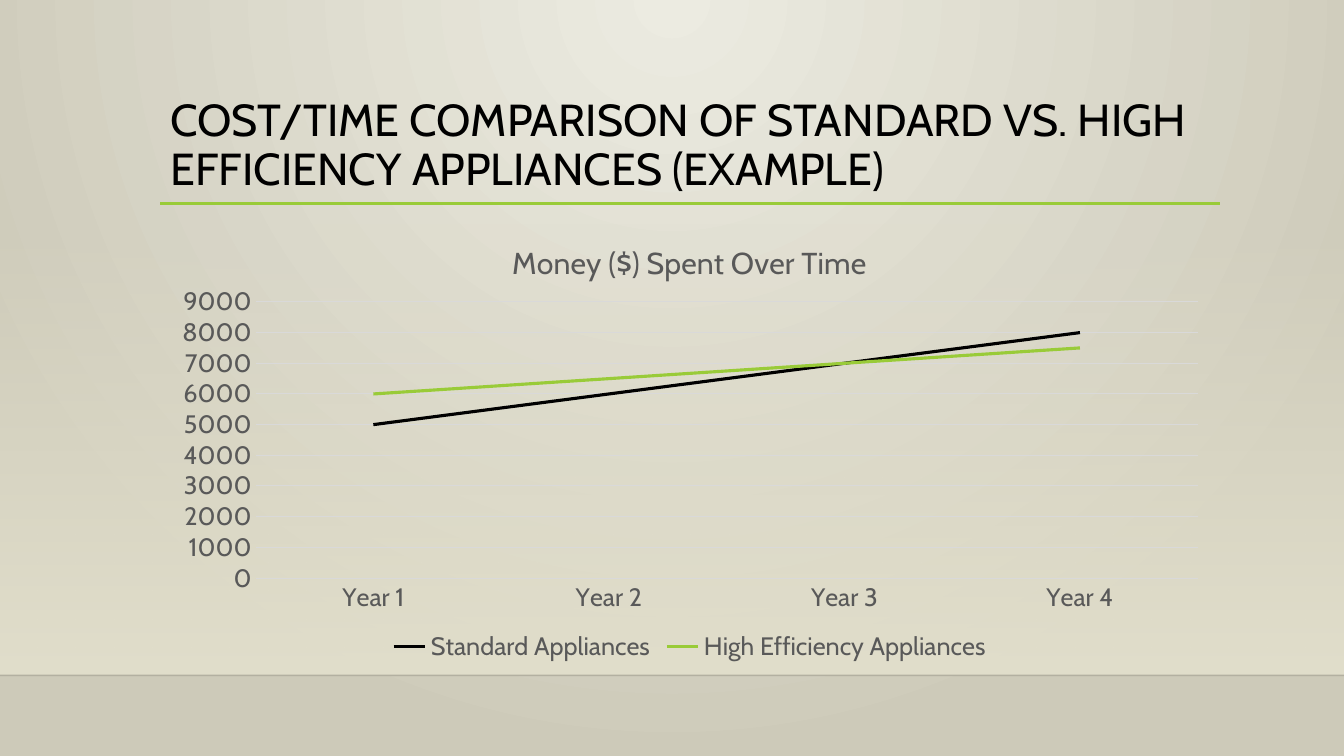
from typing import NamedTuple

from lxml.etree import SubElement
from pptx import Presentation
from pptx.chart.data import CategoryChartData
from pptx.dml.color import RGBColor
from pptx.enum.chart import XL_CHART_TYPE, XL_LEGEND_POSITION, XL_TICK_MARK
from pptx.enum.shapes import MSO_CONNECTOR, MSO_SHAPE
from pptx.enum.text import MSO_ANCHOR, MSO_AUTO_SIZE, PP_ALIGN
from pptx.oxml import parse_xml
from pptx.oxml.ns import nsdecls, qn
from pptx.util import Inches, Pt

FONT = "Cabin"
BLACK, GREEN, GREY, PALE, SAND = "000000", "99CB38", "595959", "D9D9D9", "E2DFCC"
CONTENT_LEFT, CONTENT_WIDTH = 1.59, 10.5


class Rule(NamedTuple):
    """A horizontal line across part of the slide."""

    left: float
    right: float
    top: float
    color: str
    weight: float
    opacity: int = 100


class Stop(NamedTuple):
    """A gradient stop, in percent."""

    position: int
    color: str
    opacity: int = 100


class Appliance(NamedTuple):
    """Yearly spending on one kind of appliance."""

    name: str
    spending: tuple[int, ...]
    color: str


RULES = (
    Rule(0, 13.33, 6.7, "000001", 1, 20),
    Rule(CONTENT_LEFT, 12.1, 2.02, GREEN, 2.5),
)
YEARS = ("Year 1", "Year 2", "Year 3", "Year 4")
APPLIANCES = (
    Appliance("Standard Appliances", (5000, 6000, 7000, 8000), BLACK),
    Appliance("High Efficiency Appliances", (6000, 6500, 7000, 7500), GREEN),
)
GLOW = (
    '<a:path {} path="circle"><a:fillToRect l="43000" t="0" r="43000" b="100000"/></a:path>'
).format(nsdecls("a"))
DOWNWARD = '<a:lin {} ang="5400000" scaled="0"/>'.format(nsdecls("a"))


def rgb(color: str) -> RGBColor:
    """Turn a hex string into a colour."""
    return RGBColor.from_string(color)


def style_font(font, size: float, color: str) -> None:
    """Give a font the slide's typeface, a size and a colour."""
    font.name, font.size, font.bold = FONT, Pt(size), False
    font.color.rgb = rgb(color)


def style_line(line, color: str, weight: float) -> None:
    """Give a line a colour and a weight."""
    line.color.rgb = rgb(color)
    line.width = Pt(weight)


def set_opacity(color_element, opacity: int) -> None:
    """Add an opacity in percent to a colour element."""
    if opacity < 100:
        SubElement(color_element, qn("a:alpha"), val=str(opacity * 1000))


def paint_gradient(owner, stops: tuple[Stop, ...], direction: str) -> None:
    """Replace the stops and direction of the first gradient in an element."""
    gradient = owner.find(".//" + qn("a:gradFill"))
    for child in list(gradient):
        gradient.remove(child)
    stop_list = SubElement(gradient, qn("a:gsLst"))
    for stop in stops:
        mark = SubElement(stop_list, qn("a:gs"), pos=str(stop.position * 1000))
        set_opacity(SubElement(mark, qn("a:srgbClr"), val=stop.color), stop.opacity)
    gradient.append(parse_xml(direction))


def write_text(frame, text: str, *, size: float, color: str,
               align: PP_ALIGN, line_spacing: float = 1.0) -> None:
    """Write one formatted paragraph into a text frame."""
    frame.text = text
    paragraph = frame.paragraphs[0]
    paragraph.alignment = align
    paragraph.line_spacing = line_spacing
    style_font(paragraph.runs[0].font, size, color)


def draw_backdrop(slide) -> None:
    """Paint the radial background and the fading band."""
    slide.background.fill.gradient()
    paint_gradient(slide.element, (Stop(0, "ECEBE1"), Stop(100, "CDCAB9")), GLOW)
    band = slide.shapes.add_shape(
        MSO_SHAPE.RECTANGLE, 0, Inches(2.21), Inches(13.33), Inches(4.49))
    band.shadow.inherit = False
    band.line.fill.background()
    band.fill.gradient()
    paint_gradient(band.element, (Stop(0, SAND, 0), Stop(100, SAND)), DOWNWARD)


def draw_rule(slide, rule: Rule) -> None:
    """Draw a horizontal line without a shadow."""
    connector = slide.shapes.add_connector(
        MSO_CONNECTOR.STRAIGHT, Inches(rule.left), Inches(rule.top),
        Inches(rule.right), Inches(rule.top))
    style_line(connector.line, rule.color, rule.weight)
    set_opacity(connector.element.find(".//" + qn("a:srgbClr")), rule.opacity)
    SubElement(connector.element.spPr, qn("a:effectLst"))


def write_title(slide) -> None:
    """Place and format the title above the backdrop."""
    title = slide.shapes.title
    title.left, title.top = Inches(CONTENT_LEFT), Inches(0.88)
    title.width, title.height = Inches(CONTENT_WIDTH), Inches(1.15)
    frame = title.text_frame
    frame.word_wrap = True
    frame.auto_size = MSO_AUTO_SIZE.NONE
    frame.vertical_anchor = MSO_ANCHOR.MIDDLE
    write_text(
        frame, "COST/TIME COMPARISON OF STANDARD VS. HIGH EFFICIENCY APPLIANCES (EXAMPLE)",
        size=32, color=BLACK, align=PP_ALIGN.LEFT, line_spacing=0.9)
    title.element.getparent().append(title.element)


def place_plot(chart, **fractions: float) -> None:
    """Fix the inner plot area as fractions of the chart."""
    plot_area = chart.element.find(".//" + qn("c:plotArea"))
    for old_layout in plot_area.findall(qn("c:layout")):
        plot_area.remove(old_layout)
    layout = parse_xml("<c:layout {}/>".format(nsdecls("c")))
    manual = SubElement(layout, qn("c:manualLayout"))
    SubElement(manual, qn("c:layoutTarget"), val="inner")
    for side in ("x", "y"):
        SubElement(manual, qn(f"c:{side}Mode"), val="edge")
    for side, fraction in fractions.items():
        SubElement(manual, qn(f"c:{side}"), val=str(fraction))
    plot_area.insert(0, layout)


def draw_spending_chart(slide) -> None:
    """Draw the spending of both appliance kinds over the years."""
    spending = CategoryChartData()
    spending.categories = YEARS
    for appliance in APPLIANCES:
        spending.add_series(appliance.name, appliance.spending)
    chart = slide.shapes.add_chart(
        XL_CHART_TYPE.LINE, Inches(CONTENT_LEFT), Inches(2.2),
        Inches(CONTENT_WIDTH), Inches(4.42), spending).chart
    style_font(chart.font, 18, BLACK)
    write_text(chart.chart_title.text_frame, "Money ($) Spent Over Time",
               size=21.6, color=GREY, align=PP_ALIGN.CENTER)
    chart.chart_title.include_in_layout = False
    chart.has_legend = True
    chart.legend.position = XL_LEGEND_POSITION.BOTTOM
    chart.legend.include_in_layout = False
    style_font(chart.legend.font, 18, GREY)
    years, dollars = chart.category_axis, chart.value_axis
    for axis in (years, dollars):
        axis.major_tick_mark = axis.minor_tick_mark = XL_TICK_MARK.NONE
        style_font(axis.tick_labels.font, 18, GREY)
    style_line(years.format.line, PALE, 0.75)
    dollars.format.line.fill.background()
    dollars.minimum_scale, dollars.maximum_scale, dollars.major_unit = 0, 9000, 1000
    style_line(dollars.major_gridlines.format.line, PALE, 0.75)
    chart.plots[0].vary_by_categories = False
    for series, appliance in zip(chart.plots[0].series, APPLIANCES):
        series.smooth = False
        style_line(series.format.line, appliance.color, 2.25)
    place_plot(chart, x=0.09, y=0.18, w=0.89, h=0.62)


def main() -> None:
    """Build and save the slide."""
    presentation = Presentation()
    presentation.slide_width, presentation.slide_height = Inches(13.33), Inches(7.5)
    slide = presentation.slides.add_slide(presentation.slide_layouts[5])
    draw_backdrop(slide)
    for rule in RULES:
        draw_rule(slide, rule)
    write_title(slide)
    draw_spending_chart(slide)
    presentation.save("out.pptx")


if __name__ == "__main__":
    main()
